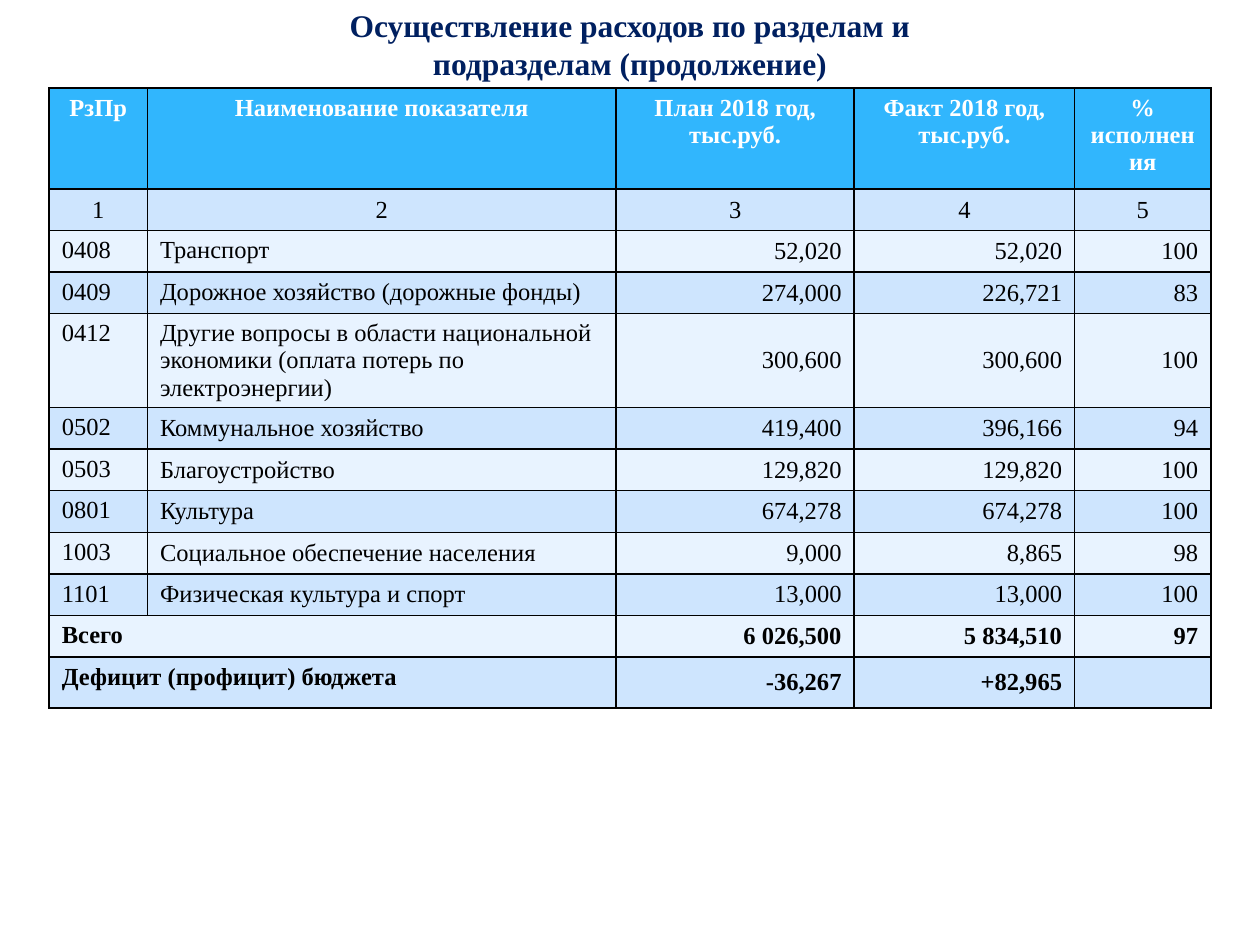
from lxml import etree
from pptx import Presentation, util as u
from pptx.dml.color import RGBColor
from pptx.enum import text
from pptx.oxml import ns

FONT = "Times New Roman"
HEADER, DARK_BAND, LIGHT_BAND = "31B6FD", "CEE5FE", "E8F3FF"
COLUMNS = [0.78, 3.72, 1.89, 1.75, 1.08]
ROW, HEADER_ROW, LONG_ROW, LAST_ROW = 0.33, 0.8, 0.57, 0.38
ROWS = [
    ["РзПр", "Наименование показателя", "План 2018 год, тыс.руб.",
     "Факт 2018 год, тыс.руб.", "% исполнения"],
    ["1", "2", "3", "4", "5"],
    ["0408", "Транспорт", "52,020", "52,020", "100"],
    ["0409", "Дорожное хозяйство (дорожные фонды)", "274,000", "226,721", "83"],
    ["0412", "Другие вопросы в области национальной экономики "
     "(оплата потерь по электроэнергии)", "300,600", "300,600", "100"],
    ["0502", "Коммунальное хозяйство", "419,400", "396,166", "94"],
    ["0503", "Благоустройство", "129,820", "129,820", "100"],
    ["0801", "Культура", "674,278", "674,278", "100"],
    ["1003", "Социальное обеспечение населения", "9,000", "8,865", "98"],
    ["1101", "Физическая культура и спорт", "13,000", "13,000", "100"],
    ["Всего", "", "6 026,500", "5 834,510", "97"],
    ["Дефицит (профицит) бюджета", "", "-36,267", "+82,965", ""],
]
FIRST_TOTAL = len(ROWS) - 2
FIRST_MIDDLE_NAME = 5


def write(frame, words, size, color, bold, align):
    frame.text = words
    para = frame.paragraphs[0]
    para.alignment = align
    for span in para.runs:
        span.font.name, span.font.size, span.font.bold = FONT, u.Pt(size), bold
        span.font.color.rgb = RGBColor.from_string(color)


def add_borders(cell):
    """Draw a thin black line on all four sides, ahead of the cell's fill."""
    props = cell._tc.get_or_add_tcPr()
    for place, side in enumerate(("lnL", "lnR", "lnT", "lnB")):
        line = etree.Element(ns.qn("a:" + side), w=str(u.Pt(1)))
        fill = etree.SubElement(line, ns.qn("a:solidFill"))
        etree.SubElement(fill, ns.qn("a:srgbClr"), val="000000")
        props.insert(place, line)


deck = Presentation()
deck.slide_width, deck.slide_height = u.Inches(10), u.Inches(7.5)
page = deck.slides.add_slide(deck.slide_layouts[6])

heights = [HEADER_ROW] + [ROW] * (len(ROWS) - 2) + [LAST_ROW]
heights[4] = LONG_ROW
table = page.shapes.add_table(
    len(ROWS), len(COLUMNS), u.Inches(0.39), u.Inches(0.7),
    u.Inches(sum(COLUMNS)), u.Inches(sum(heights))).table
for column, width in zip(table.columns, COLUMNS):
    column.width = u.Inches(width)
for row, height in zip(table.rows, heights):
    row.height = u.Inches(height)

for r, values in enumerate(ROWS):
    for c, value in enumerate(values):
        cell = table.cell(r, c)
        is_total = r >= FIRST_TOTAL
        if r < 2:
            align = text.PP_ALIGN.CENTER
        else:
            align = text.PP_ALIGN.RIGHT if c > 1 else text.PP_ALIGN.LEFT
        if value:
            write(cell.text_frame, value, 14, "000000" if r else "FFFFFF",
                  r == 0 or is_total, align)
        middle = r == 1 or r > 1 and (c > 1 or c == 1 and r >= FIRST_MIDDLE_NAME)
        cell.vertical_anchor = text.MSO_ANCHOR.MIDDLE if middle else text.MSO_ANCHOR.TOP
        cell.fill.solid()
        band = DARK_BAND if r % 2 else LIGHT_BAND
        cell.fill.fore_color.rgb = RGBColor.from_string(band if r else HEADER)
        add_borders(cell)
    if r >= FIRST_TOTAL:
        table.cell(r, 0).merge(table.cell(r, 1))

title = page.shapes.add_textbox(
    deck.slide_width // 4, 0, deck.slide_width // 2, u.Inches(0.71))
title.text_frame.word_wrap = True
write(title.text_frame, "Осуществление расходов по разделам и подразделам (продолжение)",
      18, "002060", True, text.PP_ALIGN.CENTER)

deck.save("out.pptx")
